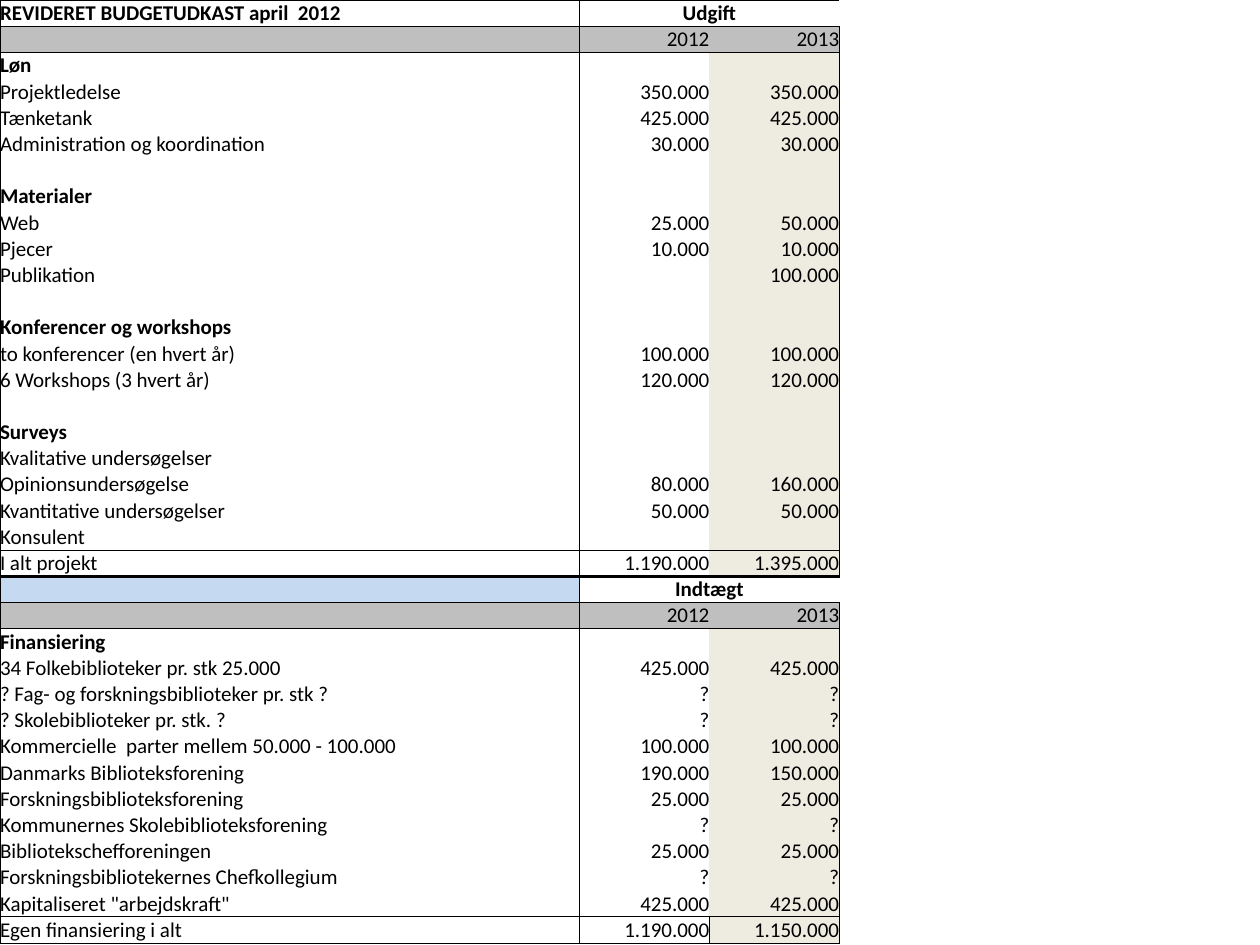
from dataclasses import dataclass
from enum import Enum
from typing import Optional

from lxml.etree import SubElement
from pptx import Presentation
from pptx.dml.color import RGBColor
from pptx.enum.text import MSO_ANCHOR, PP_ALIGN
from pptx.oxml.ns import qn
from pptx.table import _Cell
from pptx.util import Inches, Pt

COLORS = {
    "ink": "000000",
    "years": "BFBFBF",
    "second year": "EEECE1",
    "income": "C5D9F1",
}
FONT = "Calibri"
FONT_SIZE = Pt(12)
THIN = Pt(0.5)
THICK = Pt(2)
COLUMN_WIDTHS = (4.6, 1.03, 1.03)
BUDGET_HEIGHT = Inches(7.49)


class Kind(Enum):
    CAPTION = "caption"
    YEARS = "years"
    HEADING = "heading"
    ITEM = "item"
    TOTAL = "total"


@dataclass(frozen=True)
class Entry:
    label: str = ""
    first: str = ""
    second: str = ""
    kind: Kind = Kind.ITEM

    @property
    def ruled(self) -> bool:
        return self.kind in (Kind.CAPTION, Kind.YEARS, Kind.TOTAL)

    @property
    def bold(self) -> bool:
        return self.kind in (Kind.CAPTION, Kind.HEADING)


YEARS = Entry("", "2012", "2013", Kind.YEARS)
ENTRIES = (
    Entry("REVIDERET BUDGETUDKAST april  2012", "Udgift", kind=Kind.CAPTION),
    YEARS,
    Entry("Løn", kind=Kind.HEADING),
    Entry("Projektledelse", "350.000", "350.000"),
    Entry("Tænketank", "425.000", "425.000"),
    Entry("Administration og koordination", "30.000", "30.000"),
    Entry(),
    Entry("Materialer", kind=Kind.HEADING),
    Entry("Web", "25.000", "50.000"),
    Entry("Pjecer", "10.000", "10.000"),
    Entry("Publikation", "", "100.000"),
    Entry(),
    Entry("Konferencer og workshops", kind=Kind.HEADING),
    Entry("to konferencer (en hvert år)", "100.000", "100.000"),
    Entry("6 Workshops (3 hvert år)", "120.000", "120.000"),
    Entry(),
    Entry("Surveys", kind=Kind.HEADING),
    Entry("Kvalitative undersøgelser"),
    Entry("Opinionsundersøgelse", "80.000", "160.000"),
    Entry("Kvantitative undersøgelser", "50.000", "50.000"),
    Entry("Konsulent"),
    Entry("I alt projekt", "1.190.000", "1.395.000", Kind.TOTAL),
    Entry("", "Indtægt", kind=Kind.CAPTION),
    YEARS,
    Entry("Finansiering", kind=Kind.HEADING),
    Entry("34 Folkebiblioteker pr. stk 25.000", "425.000", "425.000"),
    Entry("? Fag- og forskningsbiblioteker pr. stk ?", "?", "?"),
    Entry("? Skolebiblioteker pr. stk. ?", "?", "?"),
    Entry("Kommercielle  parter mellem 50.000 - 100.000", "100.000", "100.000"),
    Entry("Danmarks Biblioteksforening", "190.000", "150.000"),
    Entry("Forskningsbiblioteksforening", "25.000", "25.000"),
    Entry("Kommunernes Skolebiblioteksforening", "?", "?"),
    Entry("Bibliotekschefforeningen", "25.000", "25.000"),
    Entry("Forskningsbibliotekernes Chefkollegium ", "?", "?"),
    Entry('Kapitaliseret "arbejdskraft"', "425.000", "425.000"),
    Entry("Egen finansiering i alt", "1.190.000", "1.150.000", Kind.TOTAL),
)


def rule_between(upper: Optional[Entry], lower: Optional[Entry]) -> int:
    if upper and lower and (upper.kind, lower.kind) == (Kind.TOTAL, Kind.CAPTION):
        return THICK
    return THIN if any(entry and entry.ruled for entry in (upper, lower)) else 0


def set_borders(cell: _Cell, widths: dict[str, int]) -> None:
    properties = cell._tc.get_or_add_tcPr()
    for side, width in widths.items():
        line = SubElement(properties, qn(f"a:ln{side}"), w=str(int(width)))
        if width:
            ink = SubElement(line, qn("a:solidFill"))
            SubElement(ink, qn("a:srgbClr"), val=COLORS["ink"])
        else:
            SubElement(line, qn("a:noFill"))


def fill_name(entry: Entry, column: int) -> Optional[str]:
    if entry.kind is Kind.YEARS:
        return "years"
    if entry.kind is Kind.CAPTION:
        return "income" if column == 0 and not entry.label else None
    return "second year" if column == 2 else None


def set_fill(cell: _Cell, name: Optional[str]) -> None:
    if name:
        cell.fill.solid()
        cell.fill.fore_color.rgb = RGBColor.from_string(COLORS[name])
    else:
        cell.fill.background()


def write_text(cell: _Cell, text: str, bold: bool, alignment: PP_ALIGN) -> None:
    cell.margin_left = cell.margin_right = cell.margin_top = cell.margin_bottom = 0
    cell.vertical_anchor = MSO_ANCHOR.BOTTOM
    cell.text_frame.text = text
    paragraph = cell.text_frame.paragraphs[0]
    paragraph.alignment = alignment
    for run in paragraph.runs:
        run.font.name = FONT
        run.font.size = FONT_SIZE
        run.font.bold = bold
        run.font.color.rgb = RGBColor.from_string(COLORS["ink"])
    if not text:
        SubElement(paragraph._p, qn("a:endParaRPr"), sz=str(int(FONT_SIZE.pt * 100)))


def main() -> None:
    """Build the budget slide and save it."""
    presentation = Presentation()
    presentation.slide_width = Inches(10)
    presentation.slide_height = Inches(7.5)
    slide = presentation.slides.add_slide(presentation.slide_layouts[6])
    budget = slide.shapes.add_table(
        len(ENTRIES), len(COLUMN_WIDTHS), 0, 0, Inches(sum(COLUMN_WIDTHS)), BUDGET_HEIGHT
    ).table
    budget.first_row = budget.horz_banding = False
    for column, width in zip(budget.columns, COLUMN_WIDTHS):
        column.width = Inches(width)

    neighbours = zip((None, *ENTRIES), ENTRIES, (*ENTRIES[1:], None))
    for row, (above, entry, below) in enumerate(neighbours):
        year_divider = 0 if below else THIN
        sides = (THIN, THIN, year_divider, THIN)
        amount_alignment = PP_ALIGN.CENTER if entry.kind is Kind.CAPTION else PP_ALIGN.RIGHT
        for column, text in enumerate((entry.label, entry.first, entry.second)):
            cell = budget.cell(row, column)
            set_borders(cell, {
                "L": sides[column],
                "R": sides[column + 1],
                "T": rule_between(above, entry),
                "B": rule_between(entry, below),
            })
            set_fill(cell, fill_name(entry, column))
            write_text(cell, text, entry.bold, amount_alignment if column else PP_ALIGN.LEFT)
        if entry.kind is Kind.CAPTION:
            budget.cell(row, 1).merge(budget.cell(row, 2))

    presentation.save("out.pptx")


if __name__ == "__main__":
    main()
